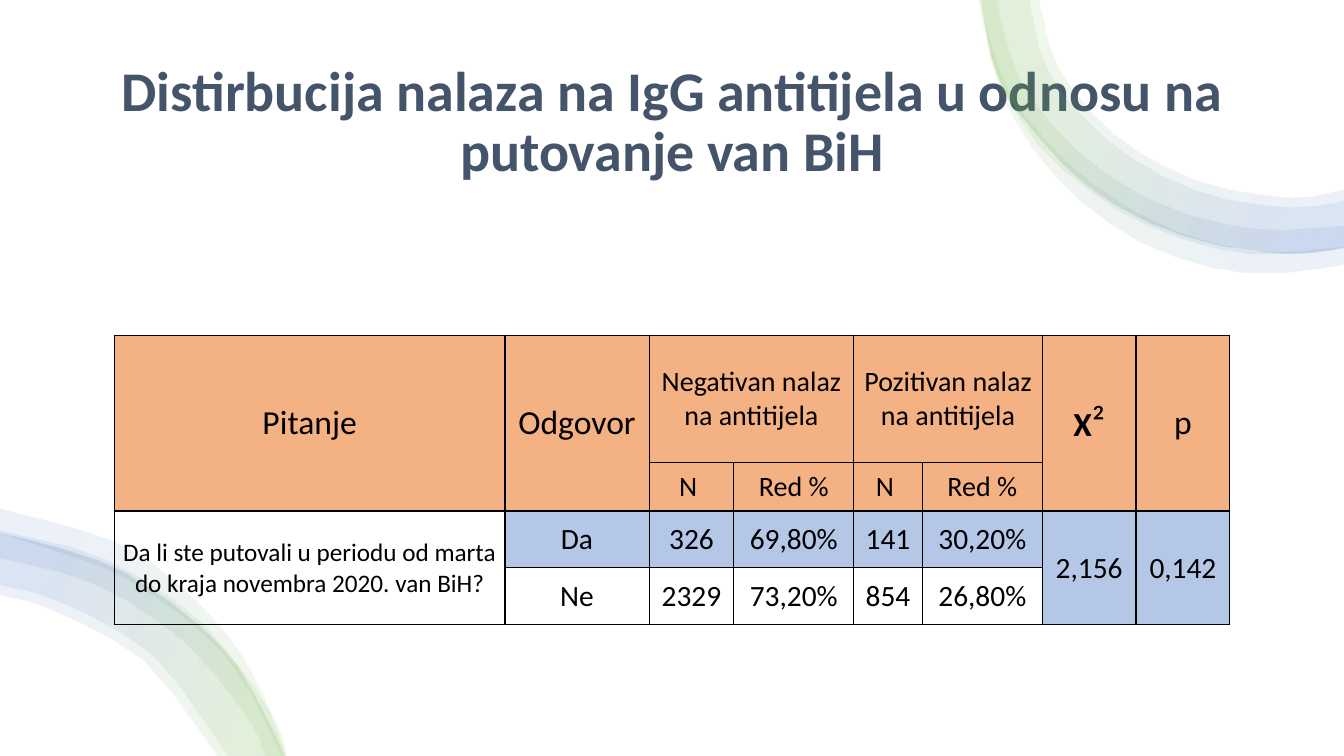
from dataclasses import dataclass

from lxml import etree
from pptx import Presentation
from pptx.dml.color import RGBColor
from pptx.enum.shapes import MSO_SHAPE
from pptx.enum.text import MSO_ANCHOR, MSO_AUTO_SIZE, PP_ALIGN
from pptx.oxml.ns import qn
from pptx.util import Pt

CENTER = PP_ALIGN.CENTER
MIDDLE = MSO_ANCHOR.MIDDLE
NO_AUTOFIT = MSO_AUTO_SIZE.NONE
RECTANGLE = MSO_SHAPE.RECTANGLE
TITLE_ONLY = 5
PAGE_WIDTH, PAGE_HEIGHT = Pt(960), Pt(540)


@dataclass(frozen=True)
class Theme:
    font: str = "Calibri"
    paper: str = "FFFFFF"
    title: str = "44546A"
    ink: str = "000000"
    header: str = "F4B183"
    accent: str = "B4C7E7"
    ribbon_stops: tuple = ((0, "70AD47"), (16, "70AD47"), (85, "4472C4"), (100, "4472C4"))
    ribbon_alpha: int = 10
    title_size: int = 40
    head_size: int = 24
    group_size: int = 20
    question_size: int = 18
    value_size: int = 21
    square_size: int = 28


THEME = Theme()
TITLE = "Distirbucija nalaza na IgG antitijela u odnosu na putovanje van BiH"

# Each ribbon: knots along its outer edge, then back along its inner edge
TOP_OUTER = [(701, 0), (708, 40), (727, 80), (777, 133), (845, 168), (921, 181), (960, 176)]
TOP_RIBBONS = [
    (TOP_OUTER, [(960, 135), (921, 141), (855, 129), (796, 96), (756, 49), (742, 0)]),
    (TOP_OUTER, [(960, 143), (921, 148), (852, 135), (792, 101), (750, 53), (735, 0)]),
    ([(701, 0), (716, 64), (759, 121), (820, 161), (892, 181), (960, 177)],
     [(960, 161), (894, 163), (828, 145), (771, 109), (729, 58), (712, 0)]),
    ([(699, 0), (714, 63), (753, 125), (814, 173), (890, 195), (960, 189)],
     [(960, 176), (892, 179), (823, 157), (763, 117), (718, 60), (701, 0)]),
]
BOTTOM_OUTER = [(203, 540), (169, 475), (124, 432), (69, 400), (0, 381)]
BOTTOM_RIBBONS = [
    ([(205, 540), (176, 473), (136, 425), (83, 387), (0, 363)],
     [(0, 381), (73, 405), (125, 436), (168, 478), (201, 540)]),
    (BOTTOM_OUTER, [(0, 425), (38, 436), (103, 472), (155, 540)]),
    ([(204, 540), (193, 508), (144, 445), (76, 400), (0, 379)],
     [(0, 399), (68, 418), (131, 458), (178, 515), (189, 540)]),
    (BOTTOM_OUTER, [(0, 418), (40, 429), (108, 467), (163, 540)]),
]

COLUMN_WIDTHS = [279, 103, 60.5, 85.7, 49, 85.7, 67, 67]
ROW_HEIGHTS = [90.7, 33.1, 40.5, 40.5]
MERGES = [((0, 0), (1, 0)), ((0, 1), (1, 1)), ((0, 2), (0, 3)), ((0, 4), (0, 5)),
          ((0, 6), (1, 6)), ((0, 7), (1, 7)),
          ((2, 0), (3, 0)), ((2, 6), (3, 6)), ((2, 7), (3, 7))]
ROWS = [
    ["Pitanje", "Odgovor", "Negativan nalaz na antitijela", None,
     "Pozitivan nalaz na antitijela", None, "X²", "p"],
    [None, None, "N ", "Red %", "N ", "Red %", None, None],
    ["Da li ste putovali u periodu od marta do kraja novembra 2020. van BiH?",
     "Da", "326", "69,80%", "141", "30,20%", "2,156", "0,142"],
    [None, "Ne", "2329", "73,20%", "854", "26,80%", None, None],
]


def style_font(font, size, color, bold=False):
    font.name = THEME.font
    font.size = Pt(size)
    font.bold = bold
    font.color.rgb = RGBColor.from_string(color)


def add_backdrop(page):
    backdrop = page.shapes.add_shape(RECTANGLE, 0, 0, PAGE_WIDTH, PAGE_HEIGHT)
    backdrop.shadow.inherit = False
    backdrop.fill.solid()
    backdrop.fill.fore_color.rgb = RGBColor.from_string(THEME.paper)
    backdrop.line.fill.background()
    # Behind the title placeholder
    page.shapes.title._element.addprevious(backdrop._element)


def smooth(knots, steps=3):
    """Points on a Catmull-Rom curve through the knots."""
    padded = [knots[0], *knots, knots[-1]]
    points = []
    for before, start, end, after in zip(padded, padded[1:], padded[2:], padded[3:]):
        for step in range(steps):
            t = step / steps
            points.append(tuple(
                (2 * b + (c - a) * t + (2 * a - 5 * b + 4 * c - d) * t ** 2
                 + (3 * b - a - 3 * c + d) * t ** 3) / 2
                for a, b, c, d in zip(before, start, end, after)))
    return points + [knots[-1]]


def add_gradient(shape, angle):
    gradient = etree.Element(qn("a:gradFill"), rotWithShape="1")
    stops = etree.SubElement(gradient, qn("a:gsLst"))
    for position, color in THEME.ribbon_stops:
        stop = etree.SubElement(stops, qn("a:gs"), pos=str(position * 1000))
        tint = etree.SubElement(stop, qn("a:srgbClr"), val=color)
        etree.SubElement(tint, qn("a:alpha"), val=str(THEME.ribbon_alpha * 1000))
    etree.SubElement(gradient, qn("a:lin"), ang=str(angle * 60000), scaled="0")
    shape._element.spPr.find(qn("a:custGeom")).addnext(gradient)


def add_ribbon(page, outer, inner, angle):
    points = smooth(outer) + smooth(inner)
    builder = page.shapes.build_freeform(*points[0], scale=Pt(1))
    builder.add_line_segments(points[1:], close=True)
    ribbon = builder.convert_to_shape()
    ribbon.shadow.inherit = False
    ribbon.line.fill.background()
    add_gradient(ribbon, angle)


def add_title(page):
    title = page.shapes.title
    title.left, title.top, title.width, title.height = Pt(63.4), Pt(36), Pt(833), Pt(104.4)
    title.text_frame.text = TITLE
    title.text_frame.vertical_anchor = MIDDLE
    title.text_frame.auto_size = NO_AUTOFIT
    para = title.text_frame.paragraphs[0]
    para.alignment = CENTER
    para.line_spacing = 0.9
    style_font(para.font, THEME.title_size, THEME.title, bold=True)


def add_borders(cell):
    properties = cell._tc.get_or_add_tcPr()
    for side in ("lnL", "lnR", "lnT", "lnB"):
        line = etree.SubElement(properties, qn(f"a:{side}"), w=str(Pt(1)))
        fill = etree.SubElement(line, qn("a:solidFill"))
        etree.SubElement(fill, qn("a:srgbClr"), val=THEME.ink)


def cell_size(row, column):
    if row >= 2:
        return THEME.question_size if column == 0 else THEME.value_size
    return THEME.group_size if 2 <= column <= 5 else THEME.head_size


def cell_color(row, column):
    if row < 2:
        return THEME.header
    if column >= 6 or (row == 2 and column > 0):
        return THEME.accent
    return None


def format_cell(cell, row, column):
    add_borders(cell)
    color = cell_color(row, column)
    if color:
        cell.fill.solid()
        cell.fill.fore_color.rgb = RGBColor.from_string(color)
    else:
        cell.fill.background()
    cell.margin_left = cell.margin_right = cell.margin_top = Pt(0.7)
    cell.margin_bottom = Pt(0)
    cell.vertical_anchor = MIDDLE


def write_cell(cell, text, size):
    para = cell.text_frame.paragraphs[0]
    para.alignment = CENTER
    style_font(para.font, size, THEME.ink)
    if text == "X²":
        for symbol, symbol_size, bold in (("X", size, True), ("²", THEME.square_size, False)):
            span = para.add_run()
            span.text = symbol
            style_font(span.font, symbol_size, THEME.ink, bold)
    else:
        para.add_run().text = text


def add_results_table(page):
    frame = page.shapes.add_table(len(ROWS), len(COLUMN_WIDTHS), Pt(81.7), Pt(239.4),
                                  Pt(sum(COLUMN_WIDTHS)), Pt(sum(ROW_HEIGHTS)))
    table = frame.table
    table.first_row = table.horz_banding = False
    for column, width in zip(table.columns, COLUMN_WIDTHS):
        column.width = Pt(width)
    for row, height in zip(table.rows, ROW_HEIGHTS):
        row.height = Pt(height)
    for first, last in MERGES:
        table.cell(*first).merge(table.cell(*last))
    for r, texts in enumerate(ROWS):
        for c, text in enumerate(texts):
            cell = table.cell(r, c)
            format_cell(cell, r, c)
            if text:
                write_cell(cell, text, cell_size(r, c))


def main():
    deck = Presentation()
    deck.slide_width, deck.slide_height = PAGE_WIDTH, PAGE_HEIGHT
    page = deck.slides.add_slide(deck.slide_layouts[TITLE_ONLY])
    add_backdrop(page)
    add_title(page)
    # Corner ribbons, green at one end and blue at the other
    for ribbons, angle in ((TOP_RIBBONS, 20), (BOTTOM_RIBBONS, 200)):
        for outer, inner in ribbons:
            add_ribbon(page, outer, inner, angle)
    add_results_table(page)
    deck.save("out.pptx")


if __name__ == "__main__":
    main()
